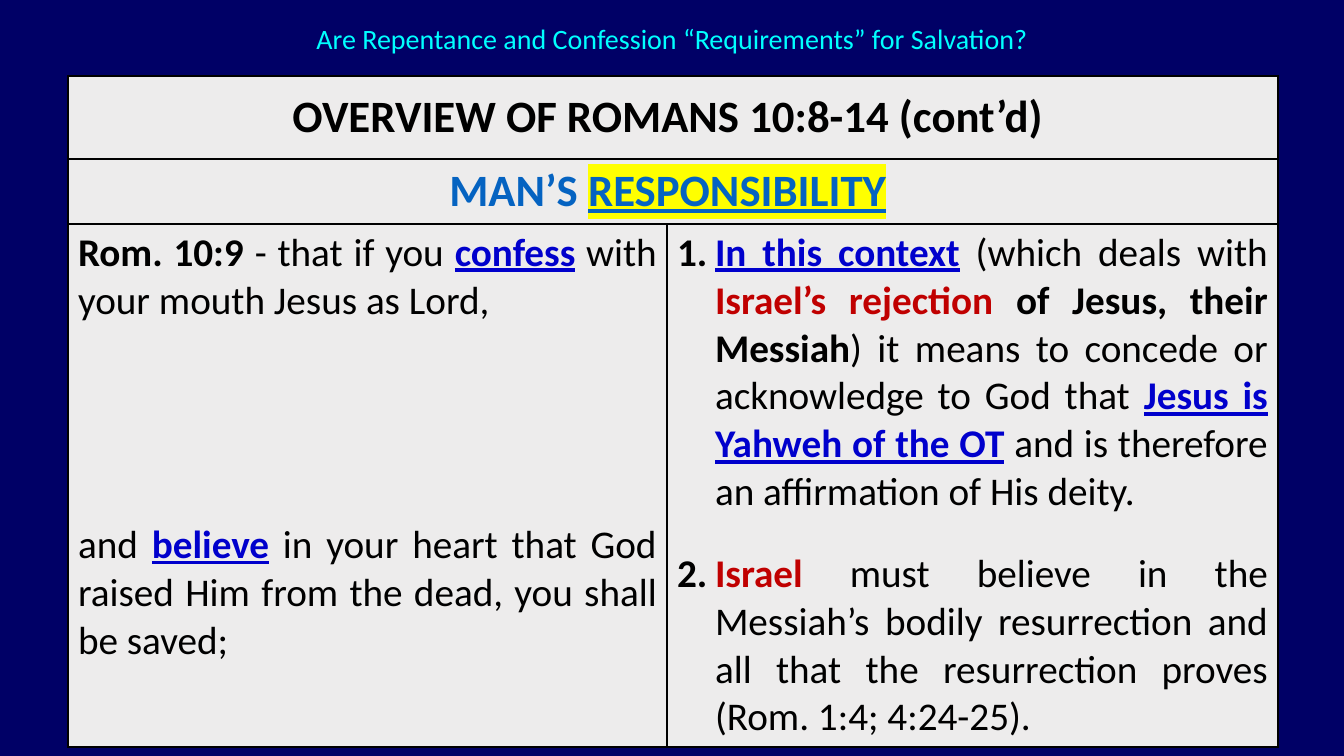
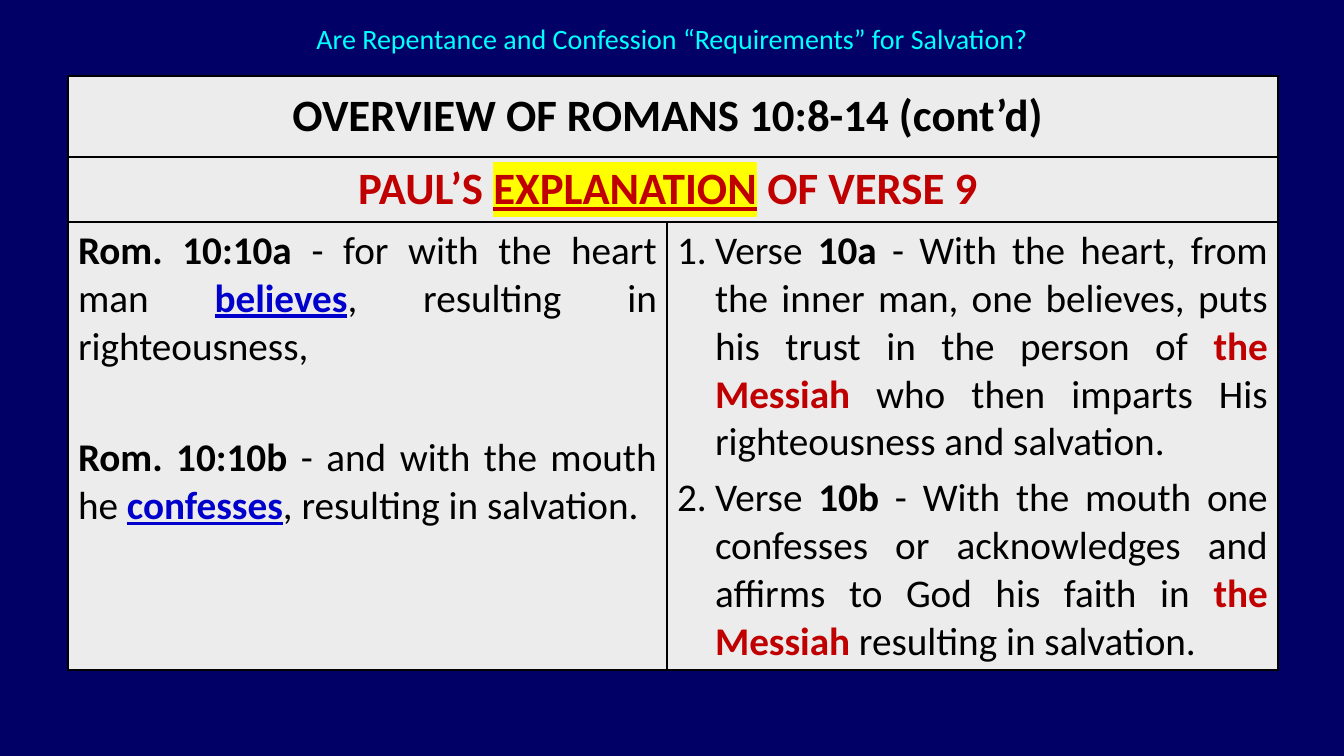
from lxml import etree
from pptx import Presentation
from pptx.dml.color import RGBColor
from pptx.enum.text import MSO_ANCHOR, PP_ALIGN
from pptx.oxml.ns import qn
from pptx.util import Pt

EMU_PER_PX = 12192000 / 1344
CENTER, JUSTIFY = PP_ALIGN.CENTER, PP_ALIGN.JUSTIFY
MIDDLE, TOP = MSO_ANCHOR.MIDDLE, MSO_ANCHOR.TOP

COLORS = {
    "navy": "000066", "cyan": "00FFFF", "panel": "EDECEC", "black": "000000",
    "blue": "0563C1", "link": "0000CC", "red": "C00000", "yellow": "FFFF00",
}
STYLES = {
    "plain": ("black", False, False, None),
    "bold": ("black", True, False, None),
    "key": ("link", True, True, None),
    "red": ("red", True, False, None),
    "red marked": ("red", True, True, "yellow"),
    "blue": ("blue", True, False, None),
    "blue marked": ("blue", True, True, "yellow"),
    "banner": ("cyan", False, False, None),
}
FONT = "Calibri"
BANNER = "Are Repentance and Confession “Requirements” for Salvation?"
HEADING = "OVERVIEW OF ROMANS 10:8-14 (cont’d) "
COLUMN_WIDTHS = (599, 611)

RESPONSIBILITY = {
    "rows": (83, 65, 523),
    "topic": [("MAN’S ", "blue"), ("RESPONSIBILITY", "blue marked"), (" ", "blue")],
    "verses": [
        [("Rom. 10:9 ", "bold"), ("- that if you ", "plain"), ("confess", "key"),
         (" with your mouth Jesus as Lord, ", "plain")],
        [("and ", "plain"), ("believe", "key"),
         (" in your heart that God raised Him from the dead, you shall be saved;", "plain")],
    ],
    "verse_gap": 140.4,
    "notes": [
        [("In this context", "key"), (" (which deals with ", "plain"),
         ("Israel’s rejection", "red"), (" of Jesus, their Messiah", "bold"),
         (") it means to concede or acknowledge to God that ", "plain"),
         ("Jesus is Yahweh of the OT", "key"),
         (" and is therefore an affirmation of His deity.", "plain")],
        [("Israel", "red"),
         (" must believe in the Messiah’s bodily resurrection and all that the "
          "resurrection proves (Rom. 1:4; 4:24-25).", "plain")],
    ],
    "note_gap": 24,
}
EXPLANATION = {
    "rows": (81, 65, 448),
    "topic": [("PAUL’S ", "red"), ("EXPLANATION", "red marked"), (" OF VERSE 9 ", "red")],
    "verses": [
        [("Rom. 10:10a ", "bold"), ("- for with the heart man ", "plain"),
         ("believes", "key"), (", resulting in righteousness, ", "plain")],
        [("Rom. 10:10b ", "bold"), ("- and with the mouth he ", "plain"),
         ("confesses", "key"), (", resulting in salvation. ", "plain")],
    ],
    "verse_gap": 45.4,
    "notes": [
        [("Verse ", "plain"), ("10a ", "bold"),
         ("- With the heart, from the inner man, one believes, puts his trust in "
          "the person of ", "plain"), ("the Messiah", "red"),
         (" who then imparts His righteousness and salvation.", "plain")],
        [("Verse ", "plain"), ("10b ", "bold"),
         ("- With the mouth one confesses or acknowledges and affirms to God his "
          "faith in ", "plain"), ("the Messiah", "red"),
         (" resulting in salvation.", "plain")],
    ],
    "note_gap": 5.6,
}


class StudyDeck:
    """Holds the deck's style and the page being built."""

    def __init__(self):
        """Open a deck of the right size."""
        self.deck = Presentation()
        self.deck.slide_width, self.deck.slide_height = self.px(1344), self.px(756)
        self.page = None

    @staticmethod
    def px(length):
        """Turn px into EMU."""
        return round(length * EMU_PER_PX)

    @staticmethod
    def paint(fill, color):
        """Give a fill one solid colour."""
        fill.solid()
        fill.fore_color.rgb = RGBColor.from_string(COLORS[color])

    @staticmethod
    def add_color(parent, tag, color):
        """Append a colour element to an XML parent."""
        holder = etree.SubElement(parent, qn(tag))
        etree.SubElement(holder, qn("a:srgbClr"), val=COLORS[color])
        return holder

    def add_page(self):
        """Start a page with the navy background and the banner."""
        self.page = self.deck.slides.add_slide(self.deck.slide_layouts[6])
        self.paint(self.page.background.fill, "navy")
        box = self.page.shapes.add_textbox(*map(self.px, (227, 17, 890, 42)))
        box.text_frame.word_wrap = True
        box.text_frame.vertical_anchor = MIDDLE
        self.add_text(box.text_frame, [[(BANNER, "banner")]], 20)

    def add_text(self, frame, paragraphs, size, align=CENTER, gap=0, numbered=False):
        """Fill a text frame with styled paragraphs."""
        for index, spans in enumerate(paragraphs):
            para = frame.add_paragraph() if index else frame.paragraphs[0]
            para.alignment = align
            para.space_before = Pt(gap if index else 0)
            para.font.size, para.font.name = Pt(size), FONT
            if numbered:
                self.number(para)
            for text, style in spans:
                self.add_span(para, text, style)

    def add_span(self, para, text, style):
        """Add one run in a named style."""
        color, bold, underline, highlight = STYLES[style]
        span = para.add_run()
        span.text = text
        span.font.bold, span.font.underline = bold, underline
        self.paint(span.font.fill, color)
        if highlight:
            self.add_color(span._r.get_or_add_rPr(), "a:highlight", highlight)

    def number(self, para):
        """Give a paragraph a hanging automatic number."""
        properties = para._p.get_or_add_pPr()
        indent = self.px(38)
        properties.set("marL", str(indent))
        properties.set("indent", str(-indent))
        bullet_color = self.add_color(properties, "a:buClr", "black")
        bullet = etree.SubElement(properties, qn("a:buAutoNum"), type="arabicPeriod")
        properties.find(qn("a:defRPr")).addprevious(bullet_color)
        bullet_color.addnext(bullet)

    def style_cell(self, cell, anchor):
        """Fill a cell and draw its four borders."""
        cell.vertical_anchor = anchor
        self.paint(cell.fill, "panel")
        properties = cell._tc.get_or_add_tcPr()
        for position, side in enumerate("LRTB"):
            line = etree.Element(qn(f"a:ln{side}"), w=str(Pt(1)))
            self.add_color(line, "a:solidFill", "black")
            properties.insert(position, line)

    def add_overview(self, content):
        """Add the table of verses and numbered notes."""
        heights = content["rows"]
        bounds = (68, 76, sum(COLUMN_WIDTHS), sum(heights))
        table = self.page.shapes.add_table(3, 2, *map(self.px, bounds)).table
        table.first_row = table.horz_banding = False
        for column, width in zip(table.columns, COLUMN_WIDTHS):
            column.width = self.px(width)
        for index, height in enumerate(heights):
            table.rows[index].height = self.px(height)
            for cell in table.rows[index].cells:
                self.style_cell(cell, TOP if index else MIDDLE)
        for index, spans in enumerate(([(HEADING, "bold")], content["topic"])):
            table.cell(index, 0).merge(table.cell(index, 1))
            self.add_text(table.cell(index, 0).text_frame, [spans], 32)
        self.add_text(table.cell(2, 0).text_frame, content["verses"], 28, JUSTIFY,
                      content["verse_gap"])
        self.add_text(table.cell(2, 1).text_frame, content["notes"], 28, JUSTIFY,
                      content["note_gap"], numbered=True)


def main():
    """Build and save the deck."""
    study = StudyDeck()
    for content in (RESPONSIBILITY, EXPLANATION):
        study.add_page()
        study.add_overview(content)
    study.deck.save("out.pptx")


if __name__ == "__main__":
    main()
